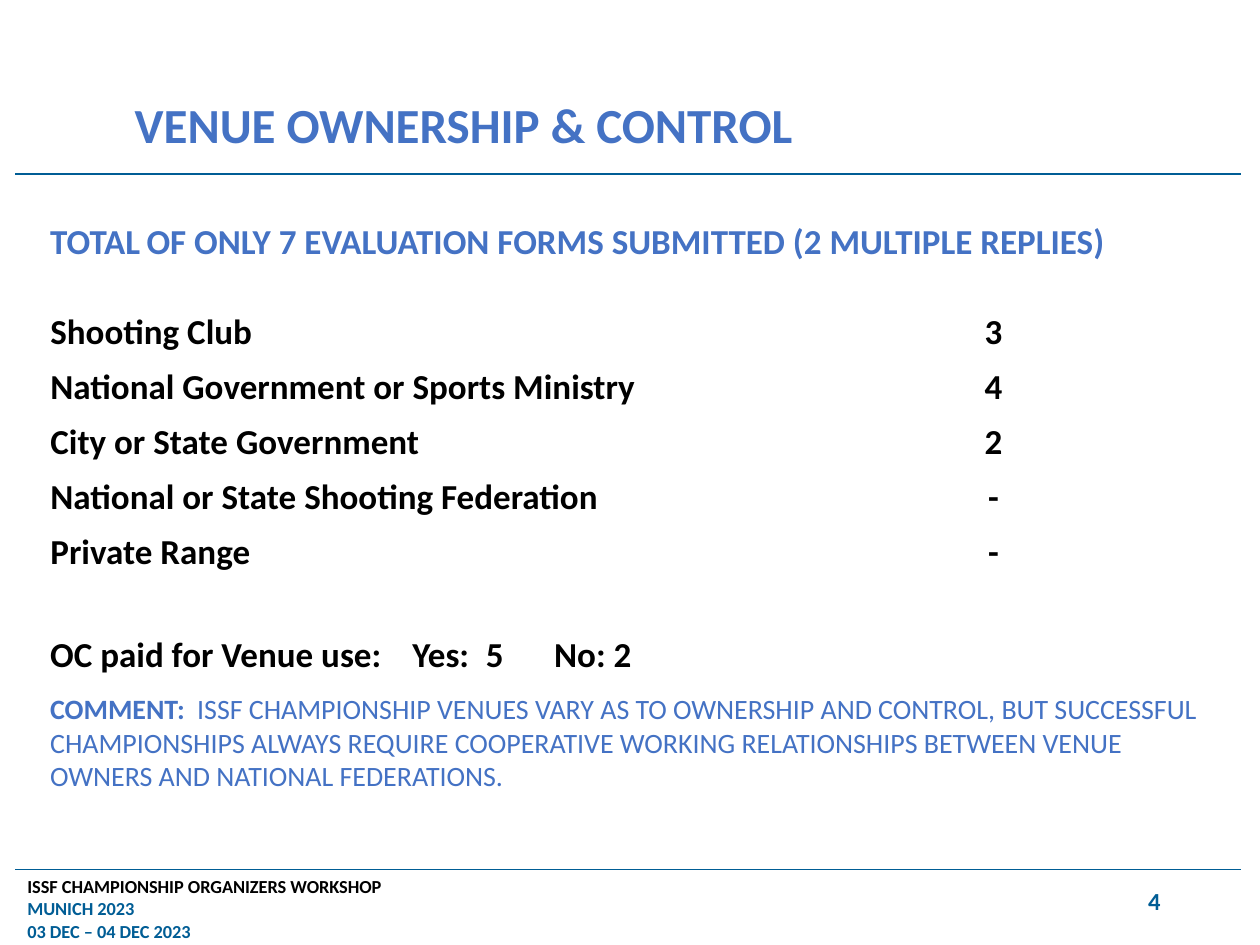
from lxml.etree import SubElement
from pptx import Presentation
from pptx.dml.color import RGBColor
from pptx.enum.shapes import MSO_CONNECTOR as Link
from pptx.enum.text import MSO_ANCHOR as Anchor, MSO_AUTO_SIZE as Fit, PP_ALIGN as Align
from pptx.oxml.ns import qn
from pptx.util import Pt

BLUE, NAVY, BLACK = "4472C4", "005D95", "000000"


def tint(code):
    return RGBColor.from_string(code)


class Page:
    font = "Calibri"

    def __init__(self, slide):
        self.slide = slide
        self.shapes = slide.shapes

    def run(self, para, text, size, color, bold=True):
        run = para.add_run()
        run.text = text
        font = run.font
        font.name, font.size, font.bold = self.font, Pt(size), bold
        font.color.rgb = tint(color)

    def title(self, box, text):
        shape = self.shapes.title
        shape.left, shape.top, shape.width, shape.height = map(Pt, box)
        frame = shape.text_frame
        frame.auto_size = Fit.NONE
        frame.vertical_anchor = Anchor.BOTTOM
        para = frame.paragraphs[0]
        para.alignment = Align.LEFT
        para.line_spacing = 0.9
        self.run(para, text, 28, BLUE)

    def line(self, y):
        link = self.shapes.add_connector(Link.STRAIGHT, Pt(8.6), Pt(y), Pt(709), Pt(y))
        link.line.color.rgb = tint(NAVY)
        link.line.width = Pt(0.75)
        SubElement(link._element.spPr, qn("a:effectLst"))

    def text(self, box, paras, gaps=(), align=Align.LEFT, anchor=Anchor.TOP):
        """Each paragraph is a list of runs; gaps are the spaces before later ones."""
        frame = self.shapes.add_textbox(*map(Pt, box)).text_frame
        frame.word_wrap = True
        frame.vertical_anchor = anchor
        for i, runs in enumerate(paras):
            para = frame.add_paragraph() if i else frame.paragraphs[0]
            para.alignment = align
            if i and gaps:
                para.space_before = Pt(gaps[i - 1])
            for run in runs:
                self.run(para, *run)
        return frame

    def tabs(self, para, stops):
        tabs = SubElement(para._p.get_or_add_pPr(), qn("a:tabLst"))
        for stop in stops:
            SubElement(tabs, qn("a:tab"), pos=str(Pt(stop)), algn="l")

    def table(self, left, top, widths, height, rows):
        frame = self.shapes.add_table(len(rows), len(widths), Pt(left), Pt(top),
                                      Pt(sum(widths)), Pt(height * len(rows)))
        table = frame.table
        table.first_row = table.horz_banding = False
        for col, width in zip(table.columns, widths):
            col.width = Pt(width)
        for r, row in enumerate(rows):
            for c, text in enumerate(row):
                cell = table.cell(r, c)
                cell.fill.background()
                para = cell.text_frame.paragraphs[0]
                para.alignment = Align.CENTER if c else Align.LEFT
                self.run(para, text, 20, BLACK)


def main():
    deck = Presentation()
    deck.slide_width, deck.slide_height = Pt(720), Pt(540)
    page = Page(deck.slides.add_slide(deck.slide_layouts[5]))

    for y in (99.4, 496.8):
        page.line(y)
    page.text((8.6, 496.8, 705.6, 43), [
        [("ISSF CHAMPIONSHIP ORGANIZERS WORKSHOP", 10.5, BLACK)],
        [("MUNICH 2023", 10.5, NAVY)],
        [("03 DEC – 04 DEC 2023", 10.5, NAVY)],
    ])

    body = page.text((21.6, 121.7, 680.4, 357.1), [
        [("TOTAL", 20, BLUE), (" ", 16, BLACK),
         ("OF ONLY 7 EVALUATION FORMS SUBMITTED (2 MULTIPLE REPLIES)", 20, BLUE)],
        [("OC paid for Venue use:\tYes:\t5\tNo: 2", 20, BLACK)],
        [("COMMENT:", 16, BLUE),
         ("\tISSF CHAMPIONSHIP VENUES VARY AS TO OWNERSHIP AND CONTROL, BUT SUCCESSFUL "
          "CHAMPIONSHIPS ALWAYS REQUIRE COOPERATIVE WORKING RELATIONSHIPS BETWEEN VENUE "
          "OWNERS AND NATIONAL FEDERATIONS.", 16, BLUE, False)],
    ], gaps=(212, 10))
    page.tabs(body.paragraphs[1], (207, 249, 288))
    page.tabs(body.paragraphs[2], (84,))

    page.title((69.8, 43.2, 510.5, 48.2), "VENUE OWNERSHIP & CONTROL")
    page.table(21.6, 174.2, (498.6, 95), 31.5, [
        ("Shooting Club", "3"),
        ("National Government or Sports Ministry", "4"),
        ("City or State Government", "2"),
        ("National or State Shooting Federation", "-"),
        ("Private Range", "-"),
    ])
    page.text((508.3, 500.4, 162, 28.8), [[("4", 14, NAVY)]],
              align=Align.RIGHT, anchor=Anchor.MIDDLE)

    deck.save("out.pptx")


if __name__ == "__main__":
    main()
